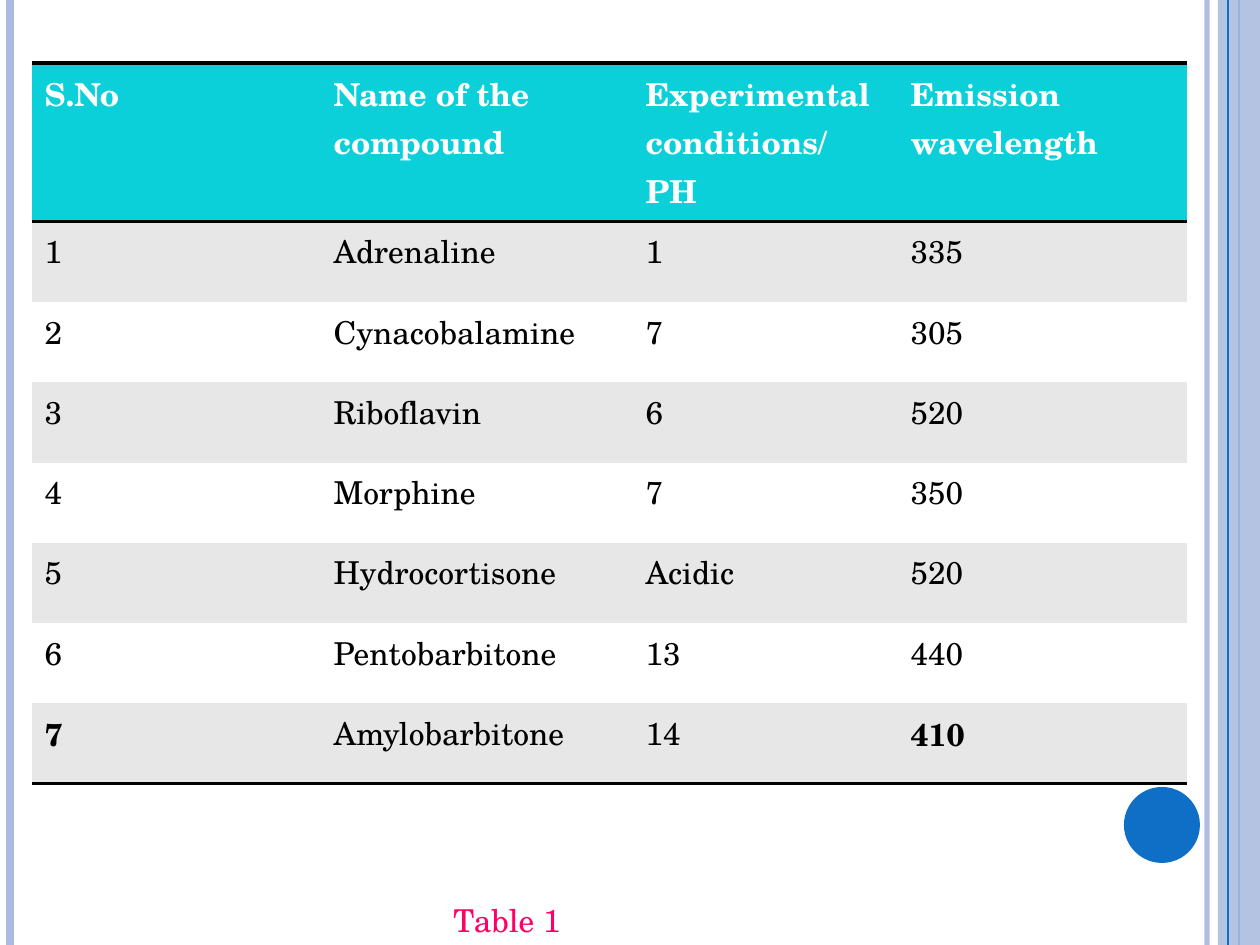
import pptx
import pptx.dml.color
import pptx.enum.shapes
import pptx.enum.text
import pptx.oxml.ns
import pptx.util
from lxml import etree

# Content
HEADER = ("S.No", "Name of the compound", "Experimental conditions/ PH", "Emission wavelength")
COMPOUNDS = [
    ("1", "Adrenaline", "1", "335"),
    ("2", "Cynacobalamine", "7", "305"),
    ("3", "Riboflavin", "6", "520"),
    ("4", "Morphine", "7", "350"),
    ("5", "Hydrocortisone", "Acidic", "520"),
    ("6", "Pentobarbitone", "13", "440"),
    ("7", "Amylobarbitone", "14", "410"),
]
BOLD_ENTRIES = {(7, 0), (7, 3)}  # row, column
CAPTION = "Table 1"

THEME = {
    "font": "TeX Gyre Schola", "size": 18,
    "pale": "ABBBDF", "blue": "0F6FC6", "header": "0BD0D9",
    "band": "E7E7E7", "white": "FFFFFF", "black": "000000", "caption": "FF0066",
    "rule": 2,
}

# Layout in px
SCALE = 914400 / 126
WIDTH, HEIGHT = 1260, 945
TABLE_LEFT, TABLE_TOP, TABLE_HEIGHT = 32, 63, 720
COLUMN_WIDTHS = (289, 312, 265, 289)
HEADER_HEIGHT = 158
# x, colour, points, opacity in percent
EDGE_LINES = [(1207, "pale", 3, 93), (10, "pale", 4.5, 100), (1239, "blue", 1.5, 100)]
PANEL_LINE = (1228, "blue", 0.75, 100)
PANEL = (1218, 0, 42, HEIGHT)
DOT = (1124, 787, 76, 76)
CAPTION_BOX = (441, 895, 231, 50)
NO_GRID_STYLE = "{2D5ABB26-0587-4C30-8999-92F81FD0307C}"


def px(value):
    return pptx.util.Emu(round(value * SCALE))


def box(values):
    return [px(value) for value in values]


def paint(fill, colour, opacity=100):
    fill.solid()
    fill.fore_color.rgb = pptx.dml.color.RGBColor.from_string(THEME[colour])
    if opacity < 100:
        tint = fill._xPr.find(".//" + pptx.oxml.ns.qn("a:srgbClr"))
        etree.SubElement(tint, pptx.oxml.ns.qn("a:alpha"), val=str(opacity * 1000))


def add_edge_line(slide, x, colour, points, opacity):
    line = slide.shapes.add_connector(
        pptx.enum.shapes.MSO_CONNECTOR.STRAIGHT, *box((x, 0, x, HEIGHT)))
    line.line.width = pptx.util.Pt(points)
    paint(line.line.fill, colour, opacity)
    etree.SubElement(line._element.spPr, pptx.oxml.ns.qn("a:effectLst"))


def add_plain_shape(slide, preset, place, colour, opacity=100):
    shape = slide.shapes.add_shape(preset, *box(place))
    shape.shadow.inherit = False
    shape.line.fill.background()
    paint(shape.fill, colour, opacity)


def write(frame, text, colour, bold=False):
    run = frame.paragraphs[0].add_run()
    run.text = text
    run.font.name = THEME["font"]
    run.font.size = pptx.util.Pt(THEME["size"])
    run.font.bold = bold
    paint(run.font.fill, colour)


def add_rule(cell, side):
    rule = etree.SubElement(cell._tc.get_or_add_tcPr(), pptx.oxml.ns.qn("a:" + side),
                            w=str(pptx.util.Pt(THEME["rule"])))
    solid = etree.SubElement(rule, pptx.oxml.ns.qn("a:solidFill"))
    etree.SubElement(solid, pptx.oxml.ns.qn("a:srgbClr"), val=THEME["black"])


def add_compound_table(slide):
    entries = [HEADER, *COMPOUNDS]
    frame = slide.shapes.add_table(
        len(entries), len(HEADER),
        *box((TABLE_LEFT, TABLE_TOP, sum(COLUMN_WIDTHS), TABLE_HEIGHT)))
    table = frame.table
    table._tbl.tblPr.find(pptx.oxml.ns.qn("a:tableStyleId")).text = NO_GRID_STYLE
    for column, width in zip(table.columns, COLUMN_WIDTHS):
        column.width = px(width)
    body_height = (TABLE_HEIGHT - HEADER_HEIGHT) / len(COMPOUNDS)
    for r, entry in enumerate(entries):
        is_header = r == 0
        table.rows[r].height = px(HEADER_HEIGHT if is_header else body_height)
        background = "header" if is_header else "band" if r % 2 else "white"
        for c, text in enumerate(entry):
            cell = table.cell(r, c)
            if is_header:
                add_rule(cell, "lnT")
            if is_header or r == len(COMPOUNDS):
                add_rule(cell, "lnB")
            paint(cell.fill, background)
            write(cell.text_frame, text, "white" if is_header else "black",
                  is_header or (r, c) in BOLD_ENTRIES)


def main():
    deck = pptx.Presentation()
    deck.slide_width, deck.slide_height = px(WIDTH), px(HEIGHT)
    slide = deck.slides.add_slide(deck.slide_layouts[6])

    # Side decoration
    for edge_line in EDGE_LINES:
        add_edge_line(slide, *edge_line)
    add_plain_shape(slide, pptx.enum.shapes.MSO_SHAPE.RECTANGLE, PANEL, "pale", 87)
    add_edge_line(slide, *PANEL_LINE)
    add_plain_shape(slide, pptx.enum.shapes.MSO_SHAPE.OVAL, DOT, "blue")

    # Table and caption
    add_compound_table(slide)
    caption = slide.shapes.add_textbox(*box(CAPTION_BOX)).text_frame
    caption.word_wrap = True
    caption.auto_size = pptx.enum.text.MSO_AUTO_SIZE.SHAPE_TO_FIT_TEXT
    write(caption, CAPTION, "caption")

    deck.save("out.pptx")


if __name__ == "__main__":
    main()
